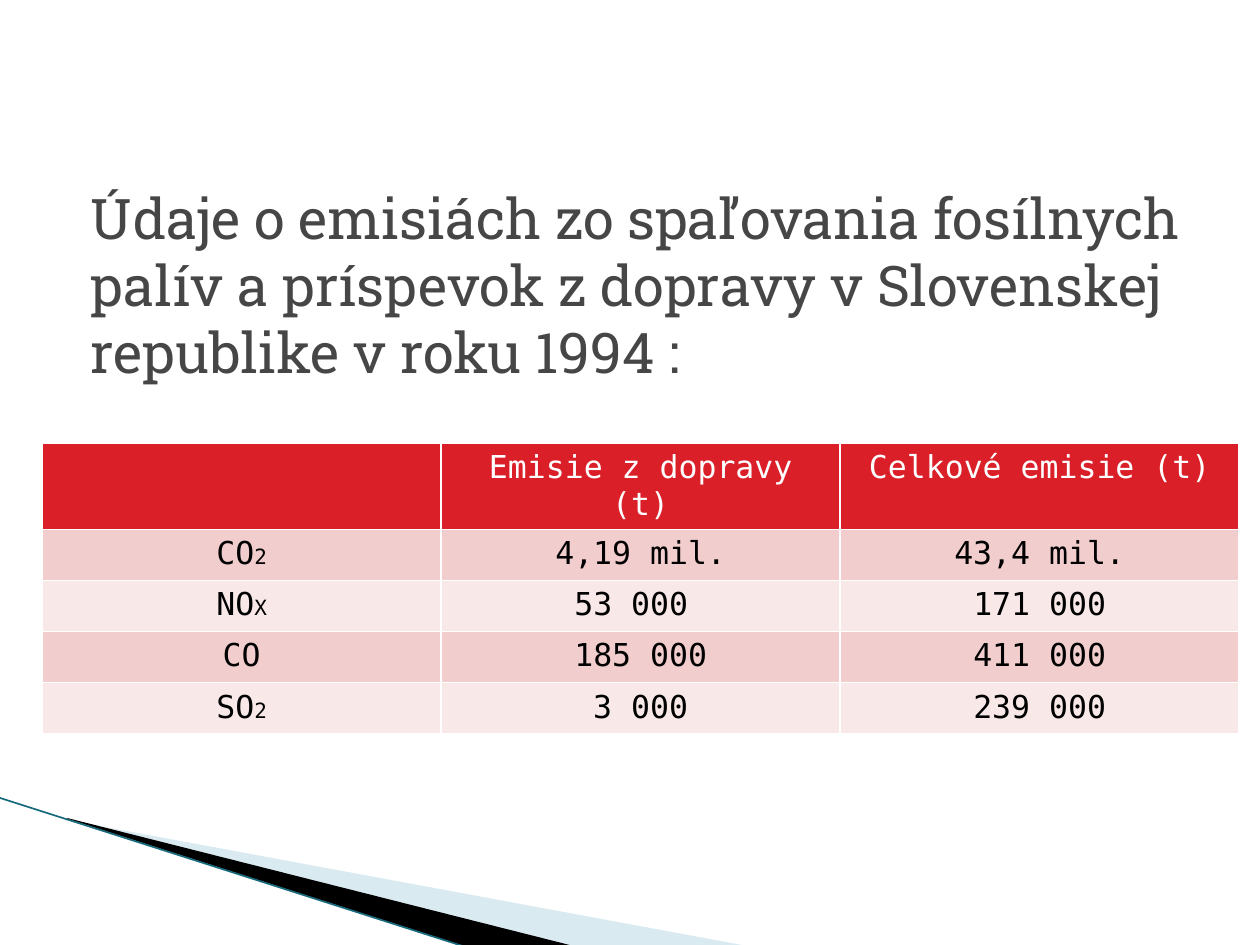
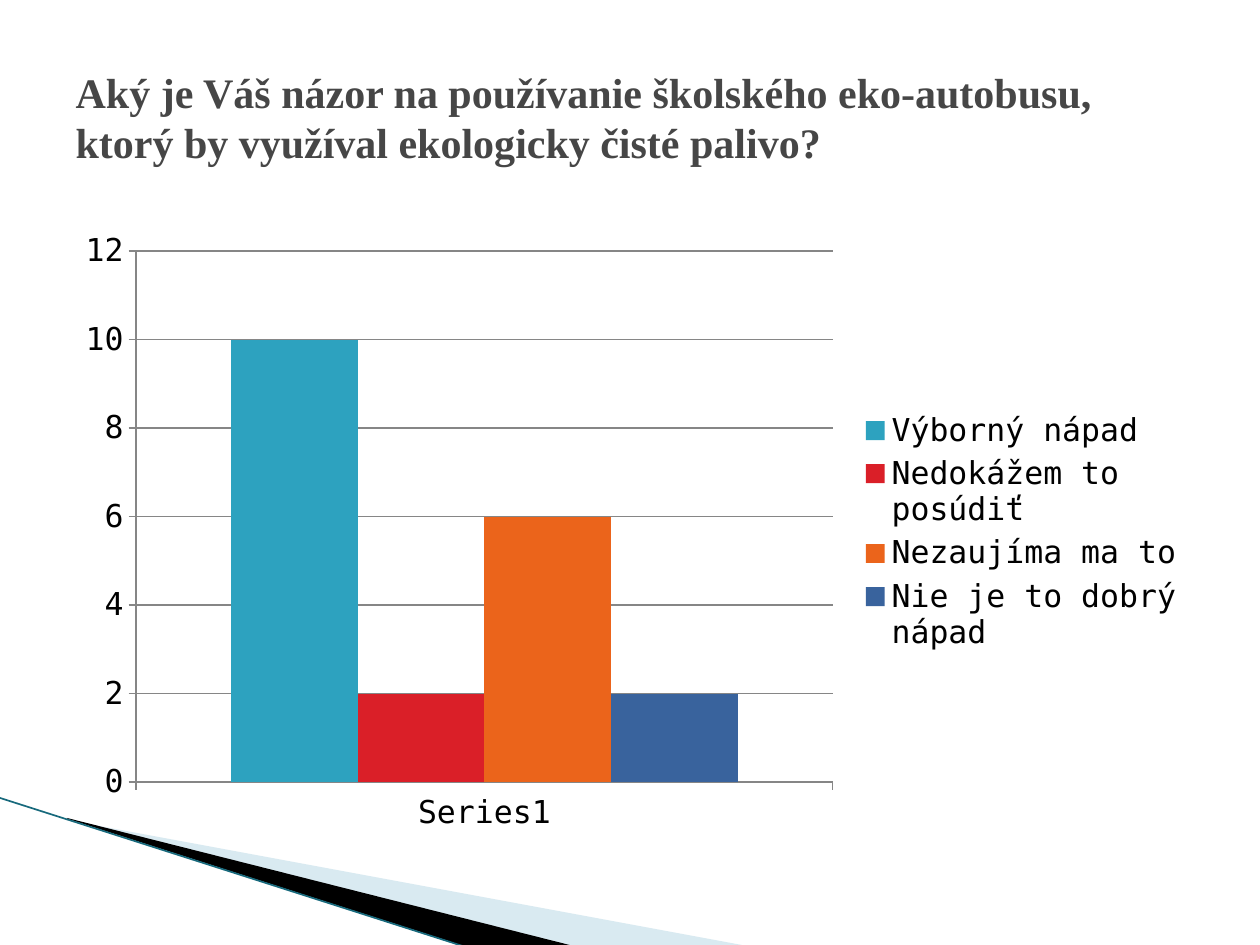
from dataclasses import dataclass
from typing import NamedTuple

from lxml.etree import SubElement
from pptx import Presentation
from pptx.chart.data import CategoryChartData as ChartData
from pptx.dml.color import RGBColor as RGB
from pptx.enum.chart import XL_CHART_TYPE as Kind
from pptx.enum.chart import XL_LEGEND_POSITION as Spot
from pptx.enum.chart import XL_TICK_MARK as Tick
from pptx.enum.shapes import MSO_CONNECTOR as Link
from pptx.enum.text import MSO_ANCHOR as Anchor
from pptx.enum.text import MSO_AUTO_SIZE as Fit
from pptx.enum.text import PP_ALIGN as Align
from pptx.oxml.ns import qn
from pptx.util import Cm, Pt


# Theme: all colours, fonts and type sizes
@dataclass(frozen=True)
class Theme:
    title: str = "464646"
    text: str = "000000"
    white: str = "FFFFFF"
    red: str = "DA1F28"
    bands: tuple = ("F1CDCD", "F8E8E8")
    teal: str = "2DA2BF"
    orange: str = "EB641B"
    blue: str = "39639D"
    pale: str = "A0CBDC"
    edge: str = "17697C"
    grid: str = "868686"
    mono: str = "DejaVu Sans Mono"
    slab: str = "Roboto Slab"
    serif: str = "Times New Roman"
    large: int = 32
    head: int = 24
    body: int = 18
    small: int = 12


THEME = Theme()


class Box(NamedTuple):
    left: float
    top: float
    width: float
    height: float

    def cm(self) -> list:
        return [Cm(v) for v in self]


class Title(NamedTuple):
    text: str
    box: Box
    face: str
    size: int
    bold: bool
    anchor: Anchor
    wrap: bool


class Wedge(NamedTuple):
    points: list
    box: Box
    color: str
    alpha: int


class Gas(NamedTuple):
    name: str
    sub: str
    road: str
    total: str


class Bar(NamedTuple):
    name: str
    value: int
    color: str


WEDGES = [
    Wedge([(1.4, 16.54), (15.11, 19.08), (11.58, 19.08), (1.4, 16.51)],
          Box(1.98, 13.89, 10.57, 4.01), THEME.pale, 40),
    Wedge([(1.35, 16.49), (11.6, 19.08), (9.45, 19.1), (1.37, 16.51)],
          Box(-0.15, 16.08, 10.57, 2.34), THEME.text, 100),
]

DATA_TITLE = Title(
    "Údaje o emisiách zo spaľovania fosílnych\n"
    "palív a príspevok z dopravy v Slovenskej\n"
    "republike v roku 1994 :",
    Box(1.58, 3.57, 22.78, 5.13), THEME.slab, THEME.large, False, Anchor.TOP, False)
POLL_TITLE = Title(
    "Aký je Váš názor na používanie školského eko-autobusu, "
    "ktorý by využíval ekologicky čisté palivo?",
    Box(1.27, 0.76, 22.86, 3.18), THEME.serif, THEME.head, True, Anchor.MIDDLE, True)

GASES = [
    Gas("", "", "Emisie z dopravy (t)", "Celkové emisie (t)"),
    Gas("CO", "2", "4,19 mil.", "43,4 mil."),
    Gas("NO", "X", "53 000 ", "171 000"),
    Gas("CO", "", "185 000", "411 000"),
    Gas("SO", "2", "3 000", "239 000"),
]

BARS = [
    Bar("Výborný nápad", 10, THEME.teal),
    Bar("Nedokážem to posúdiť", 2, THEME.red),
    Bar("Nezaujíma ma to", 6, THEME.orange),
    Bar("Nie je to dobrý nápad", 2, THEME.blue),
]


def style(font, face: str, size: int, color: str, bold: bool = False) -> None:
    font.name, font.size, font.bold = face, Pt(size), bold
    font.color.rgb = RGB.from_string(color)


def paint(fill, color: str) -> None:
    fill.solid()
    fill.fore_color.rgb = RGB.from_string(color)


def place(shape, box: Box) -> None:
    shape.left, shape.top, shape.width, shape.height = box.cm()


# Give a freeform a new frame while its outline stays where it is
def reframe(shape, box: Box) -> None:
    left, top, width, height = box.cm()
    for point in shape._element.iter(qn("a:pt")):
        point.set("x", str(int(point.get("x")) + shape.left - left))
        point.set("y", str(int(point.get("y")) + shape.top - top))
    for track in shape._element.iter(qn("a:path")):
        track.set("w", str(width))
        track.set("h", str(height))
    place(shape, box)


# Shared corner: two wedges and an edge line
def draw_wedge(slide, wedge: Wedge) -> None:
    first, *rest = [(Cm(x), Cm(y)) for x, y in wedge.points]
    pen = slide.shapes.build_freeform(*first)
    pen.add_line_segments(rest, close=True)
    shape = pen.convert_to_shape()
    reframe(shape, wedge.box)
    shape.shadow.inherit = False
    shape.line.fill.background()
    paint(shape.fill, wedge.color)
    if wedge.alpha < 100:
        color = shape.fill._xPr.find(f".//{qn('a:srgbClr')}")
        SubElement(color, qn("a:alpha"), val=str(wedge.alpha * 1000))


def draw_edge(slide) -> None:
    edge = slide.shapes.add_connector(Link.STRAIGHT, Cm(-0.02), Cm(16.08), Cm(9.42), Cm(19.1))
    edge.line.color.rgb = RGB.from_string(THEME.edge)
    edge.line.width = Pt(0.95)
    SubElement(edge._element.spPr, qn("a:effectLst"))


def add_page(deck, title: Title):
    slide = deck.slides.add_slide(deck.slide_layouts.get_by_name("Title Only"))
    for wedge in WEDGES:
        draw_wedge(slide, wedge)
    draw_edge(slide)
    shape = slide.shapes.title
    place(shape, title.box)
    frame = shape.text_frame
    frame.text = title.text
    frame.auto_size, frame.word_wrap = Fit.NONE, title.wrap
    frame.vertical_anchor = title.anchor
    for par in frame.paragraphs:
        par.alignment = Align.LEFT
        style(par.font, title.face, title.size, THEME.title, title.bold)
    return slide


# Emissions table: white rules come from the table style
def fill_cell(cell, text: str, sub: str, head: bool, back: str) -> None:
    paint(cell.fill, back)
    par = cell.text_frame.paragraphs[0]
    par.alignment = Align.CENTER
    style(par.font, THEME.mono, THEME.body, THEME.white if head else THEME.text)
    if text:
        par.add_run().text = text
    if sub:
        run = par.add_run()
        run.text = sub
        run.font.size = Pt(THEME.small)


def draw_table(slide, gases: list[Gas], box: Box) -> None:
    table = slide.shapes.add_table(len(gases), 3, *box.cm()).table
    for r, gas in enumerate(gases):
        head = r == 0
        back = THEME.red if head else THEME.bands[(r - 1) % 2]
        pairs = [(gas.name, gas.sub), (gas.road, ""), (gas.total, "")]
        for c, (text, sub) in enumerate(pairs):
            fill_cell(table.cell(r, c), text, sub, head, back)


# Poll chart
def draw_chart(slide, bars: list[Bar], box: Box) -> None:
    data = ChartData()
    data.categories = ["Series1"]
    for bar in bars:
        data.add_series(bar.name, [bar.value])
    chart = slide.shapes.add_chart(Kind.COLUMN_CLUSTERED, *box.cm(), data).chart
    style(chart.font, THEME.mono, THEME.body, THEME.text)
    chart.has_title = False
    chart.has_legend = True
    chart.legend.position = Spot.RIGHT
    chart.legend.include_in_layout = False

    plot = chart.plots[0]
    plot.vary_by_categories = False
    plot.gap_width, plot.overlap = 150, 0
    for series, bar in zip(plot.series, bars):
        paint(series.format.fill, bar.color)

    axis = chart.value_axis
    axis.minimum_scale, axis.maximum_scale, axis.major_unit = 0, 12, 2
    axis.has_major_gridlines = True
    for part in (axis, axis.major_gridlines, chart.category_axis):
        part.format.line.color.rgb = RGB.from_string(THEME.grid)
        part.format.line.width = Pt(0.75)
    for side in (axis, chart.category_axis):
        side.major_tick_mark = Tick.OUTSIDE


def main() -> None:
    deck = Presentation()
    deck.slide_width, deck.slide_height = Cm(25.4), Cm(19.05)
    draw_table(add_page(deck, DATA_TITLE), GASES, Box(0.85, 8.94, 24.13, 5.15))
    draw_chart(add_page(deck, POLL_TITLE), BARS, Box(1.27, 4.44, 22.86, 12.57))
    deck.save("out.pptx")


if __name__ == "__main__":
    main()
